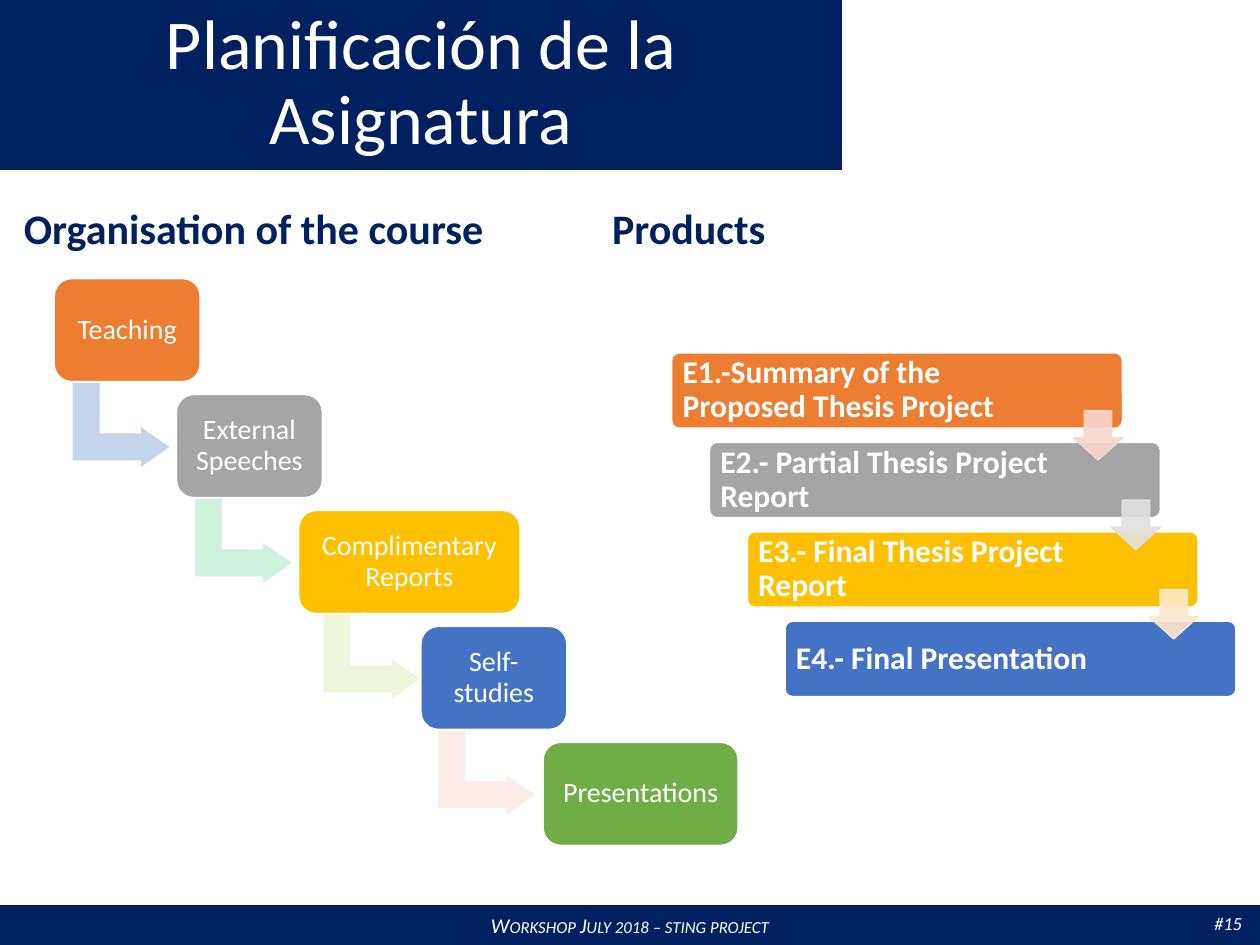
from pptx import Presentation
from pptx.dml.color import RGBColor
from pptx.enum.shapes import MSO_SHAPE
from pptx.enum.text import MSO_ANCHOR, MSO_AUTO_SIZE, PP_ALIGN
from pptx.oxml.ns import qn
from pptx.util import Inches, Pt
from lxml import etree

COLORS = {
    "navy": "002060", "white": "FFFFFF", "orange": "ED7D31", "gray": "A5A5A5",
    "gold": "FFC000", "blue": "4472C4", "green": "70AD47",
    "pale blue": "C4D5EB", "pale mint": "CFF2DF", "pale lime": "EEF7DB",
    "pale rose": "FCECE8", "pale coral": "F8D7CE", "pale gray": "E1E1E1",
    "pale gold": "FFE8CC",
}

prs = Presentation()
prs.slide_width, prs.slide_height = Inches(10), Inches(7.5)
slide = prs.slides.add_slide(prs.slide_layouts[5])


def add_block(preset, box, fill, line, adjustments=()):
    block = slide.shapes.add_shape(preset, *map(Inches, box))
    block.shadow.inherit = False
    block.fill.solid()
    block.fill.fore_color.rgb = RGBColor.from_string(COLORS[fill])
    block.line.color.rgb = RGBColor.from_string(COLORS[line])
    block.line.width = Pt(1)
    for index, value in enumerate(adjustments):
        block.adjustments[index] = value
    return block


def write(holder, text, size, color="white", align=PP_ALIGN.LEFT,
          spacing=None, frame_format=None, **font_format):
    frame = holder.text_frame
    frame.auto_size = MSO_AUTO_SIZE.NONE
    settings = {"word_wrap": True, "vertical_anchor": MSO_ANCHOR.MIDDLE}
    for name, value in (settings | (frame_format or {})).items():
        setattr(frame, name, value)
    paragraph = frame.paragraphs[0]
    paragraph.alignment = align
    paragraph.line_spacing = spacing
    run = paragraph.add_run()
    run.text = text
    run.font.color.rgb = RGBColor.from_string(COLORS[color])
    for name, value in ({"name": "Calibri", "size": Pt(size)} | font_format).items():
        setattr(run.font, name, value)
    return run


# Title over its banner
title = slide.shapes.title
banner = add_block(MSO_SHAPE.RECTANGLE, (0, 0, 6.68, 1.34), "navy", "navy")
title.left, title.top, title.width, title.height = map(Inches, (0, 0, 6.68, 1.34))
title._element.addprevious(banner._element)
write(title, "Planificación de la Asignatura", 40, align=PP_ALIGN.CENTER, spacing=0.9)

# Footer and slide number
footer = add_block(MSO_SHAPE.RECTANGLE, (0, 7.19, 10, 0.31), "navy", "navy")
workshop = write(footer, "Workshop July 2018 – sting project", 12,
                 align=PP_ALIGN.CENTER, italic=True)
workshop.font._element.set("cap", "small")

# Unwrapped labels: slide number and section headings
labels = [
    ("#15", (9.54, 7.19, 0.53, 0.28), 10.5, "white", {"italic": True}),
    ("Organisation of the course", (0.09, 1.56, 3.89, 0.5), 24, "navy", {"bold": True}),
    ("Products", (4.76, 1.56, 1.43, 0.5), 24, "navy", {"bold": True}),
]
for text, box, size, color, font_format in labels:
    label = slide.shapes.add_textbox(*map(Inches, box))
    write(label, text, size, color, **font_format,
          frame_format={"word_wrap": False, "vertical_anchor": MSO_ANCHOR.TOP})

# Course steps: a staircase of cards, each bent arrow leading to the next
margins = {f"margin_{side}": Inches(0.07) for side in ("left", "right", "top", "bottom")}
steps = [  # text, card width, fill, arrow offset, arrow fill
    ("Teaching", 1.16, "orange", 0.19, "pale blue"),
    ("External Speeches", 1.16, "gray", 0.19, "pale mint"),
    ("Complimentary Reports", 1.76, "gold", 0.24, "pale lime"),
    ("Self-studies", 1.16, "blue", 0.18, "pale rose"),
    ("Presentations", 1.55, "green", None, None),
]
for i, (text, width, fill, offset, arrow_fill) in enumerate(steps):
    left, top = 0.43 + 0.97 * i, 2.21 + 0.92 * i
    if arrow_fill:
        bend = add_block(MSO_SHAPE.BENT_UP_ARROW, (left + offset, top + 0.77, 0.69, 0.79),
                         arrow_fill, "white", (0.33, 0.25, 0.36))
        bend.rotation = 90
    card = add_block(MSO_SHAPE.ROUNDED_RECTANGLE, (left, top, width, 0.82),
                     fill, "white", (0.17,))
    write(card, text, 16, align=PP_ALIGN.CENTER, spacing=0.9, frame_format=margins)

# Products: shifted bars, text kept clear of the arrows on the right
products = [
    ("E1.-Summary of the Proposed Thesis Project", "orange"),
    ("E2.- Partial Thesis Project Report", "gray"),
    ("E3.- Final Thesis Project Report", "gold"),
    ("E4.- Final Presentation", "blue"),
]
for i, (text, fill) in enumerate(products):
    bar = add_block(MSO_SHAPE.ROUNDED_RECTANGLE, (5.33 + 0.3 * i, 2.8 + 0.71 * i, 3.58, 0.6),
                    fill, "white", (0.1,))
    write(bar, text, 18, spacing=0.9, bold=True,
          frame_format=margins | {"margin_right": Inches(0.75)})

# Slightly transparent arrows between the bars
for i, fill in enumerate(("pale coral", "pale gray", "pale gold")):
    arrow = add_block(MSO_SHAPE.DOWN_ARROW, (8.52 + 0.3 * i, 3.26 + 0.71 * i, 0.39, 0.39),
                      fill, fill, (0.55, 0.45))
    for color in arrow._element.spPr.iter(qn("a:srgbClr")):
        etree.SubElement(color, qn("a:alpha"), val="90000")

prs.save("out.pptx")
